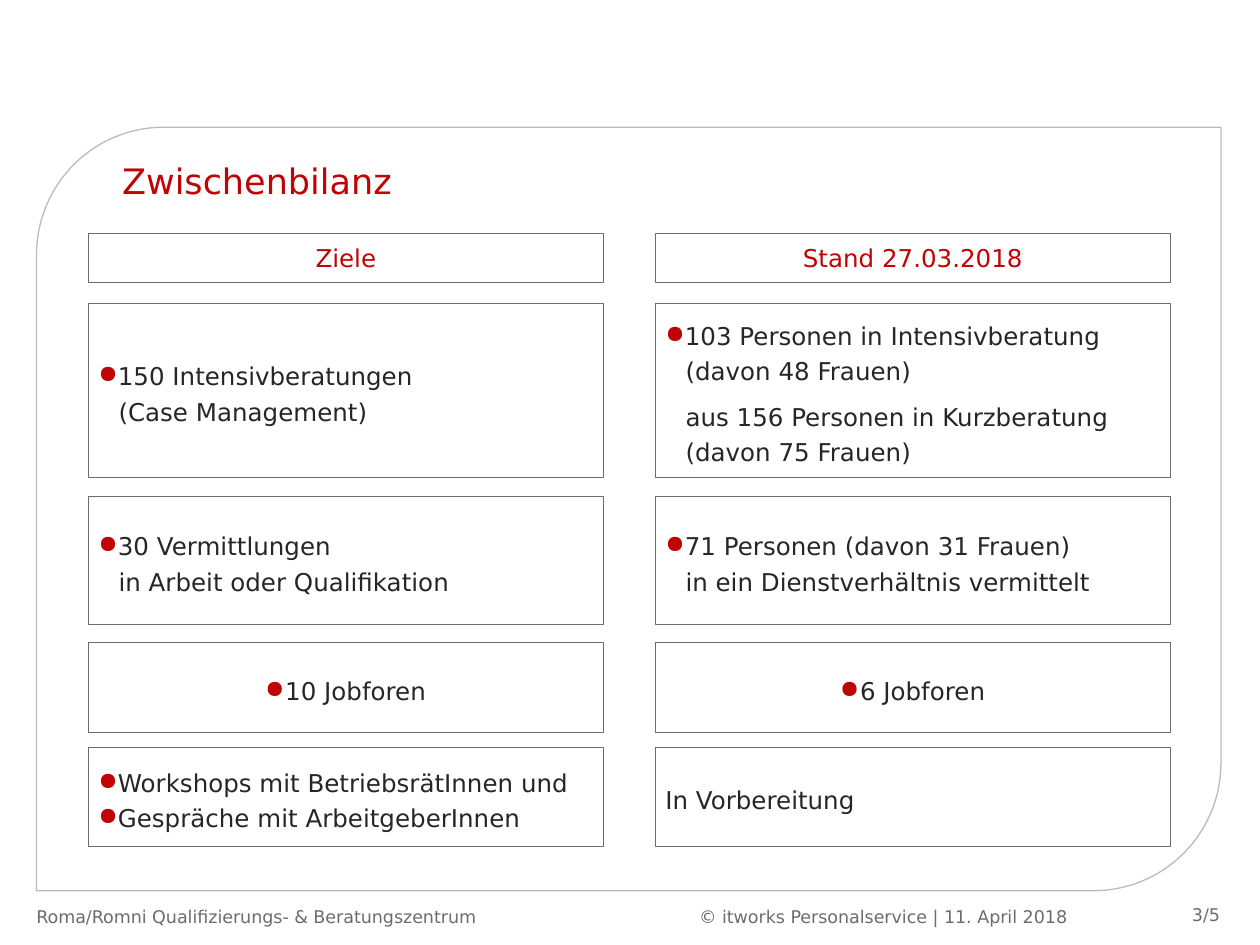
from lxml.etree import SubElement
from pptx import Presentation
from pptx.dml.color import RGBColor
from pptx.enum.shapes import MSO_SHAPE
from pptx.enum.text import MSO_ANCHOR, MSO_AUTO_SIZE, PP_ALIGN
from pptx.oxml.ns import qn
from pptx.util import Pt

FONT = "DejaVu Sans"
RED, DARK, GREY, PALE, WHITE = "C00303", "262626", "6C6C6C", "BBBBBB", "FFFFFF"

# Table-like grid: two columns, rows given as (top, height)
COLUMNS = (50.4, 374.4)
COLUMN_WIDTH = 294.5
HEADER_ROW = (133.2, 28.1)
BODY_ROWS = ((173.5, 99.4), (283.7, 73.4), (367.2, 51.1), (427, 56.9))

HEADERS = ("Ziele", "Stand 27.03.2018")

# Each line is (text, format); the format is passed to add_text
BULLET = {"bullet": "●", "margin": 8.6, "indent": -11.5}
CENTRED = {**BULLET, "align": PP_ALIGN.CENTER}
FOLLOW = {"margin": 11.5}
CELLS = (
    (
        [("150 Intensivberatungen", BULLET), ("(Case Management)", FOLLOW)],
        [
            ("103 Personen in Intensivberatung", BULLET),
            ("(davon 48 Frauen)", FOLLOW),
            ("aus 156 Personen in Kurzberatung", {**FOLLOW, "before": 6}),
            ("(davon 75 Frauen)", FOLLOW),
        ],
    ),
    (
        [("30 Vermittlungen", BULLET), ("in Arbeit oder Qualifikation", FOLLOW)],
        [
            ("71 Personen (davon 31 Frauen)", BULLET),
            ("in ein Dienstverhältnis vermittelt", FOLLOW),
        ],
    ),
    ([("10 Jobforen", CENTRED)], [("6 Jobforen", CENTRED)]),
    (
        [
            ("Workshops mit BetriebsrätInnen und", BULLET),
            ("Gespräche mit ArbeitgeberInnen", BULLET),
        ],
        [("In Vorbereitung", {})],
    ),
)


def colour(value):
    return RGBColor.from_string(value)


def add_bullet(paragraph, mark):
    properties = paragraph._p.get_or_add_pPr()
    tint = SubElement(properties, qn("a:buClr"))
    SubElement(tint, qn("a:srgbClr"), val=RED)
    SubElement(properties, qn("a:buChar"), char=mark)


def add_text(frame, text, size=14, ink=DARK, align=PP_ALIGN.LEFT, spacing=None,
             before=None, bullet=None, margin=0, indent=0):
    """Write one paragraph, reusing the first one while it is empty."""
    first = frame.paragraphs[0]
    para = frame.add_paragraph() if first.runs else first
    if bullet:
        add_bullet(para, bullet)
    if margin:
        properties = para._p.get_or_add_pPr()
        properties.set("marL", str(Pt(margin)))
        properties.set("indent", str(Pt(indent)))
    para.alignment = align
    if spacing:
        para.line_spacing = spacing
    if before:
        para.space_before = Pt(before)
    span = para.add_run()
    span.text = text
    span.font.name = FONT
    span.font.size = Pt(size)
    span.font.color.rgb = colour(ink)


def add_panel(page):
    panel = page.shapes.add_shape(MSO_SHAPE.ROUND_2_DIAG_RECTANGLE,
                                  Pt(20.9), Pt(72.7), Pt(676.8), Pt(436.3))
    panel.shadow.inherit = False
    panel.adjustments[0] = 0.167
    panel.adjustments[1] = 0
    panel.fill.solid()
    panel.fill.fore_color.rgb = colour(WHITE)
    fill = panel._element.spPr.find(qn("a:solidFill"))
    SubElement(fill[0], qn("a:alpha"), val="50000")
    panel.line.color.rgb = colour(PALE)
    panel.line.width = Pt(0.75)
    # Place the panel behind the title
    page.shapes._spTree.insert(2, panel._element)


def add_title(page, text):
    title = page.shapes.title
    title.left, title.top, title.width, title.height = (
        Pt(62.6), Pt(87.8), Pt(635), Pt(31.7))
    frame = title.text_frame
    frame.auto_size = MSO_AUTO_SIZE.NONE
    frame.vertical_anchor = MSO_ANCHOR.TOP
    add_text(frame, text, size=20, ink=RED)


def add_cell(page, left, row, lines):
    top, height = row
    cell = page.shapes.add_shape(MSO_SHAPE.RECTANGLE, Pt(left), Pt(top),
                                 Pt(COLUMN_WIDTH), Pt(height))
    cell.shadow.inherit = False
    cell.fill.background()
    cell.line.color.rgb = colour(GREY)
    cell.line.width = Pt(0.5)
    frame = cell.text_frame
    frame.word_wrap = True
    frame.vertical_anchor = MSO_ANCHOR.MIDDLE
    frame.margin_left = frame.margin_right = Pt(5.8)
    frame.margin_top = frame.margin_bottom = Pt(2.9)
    for text, style in lines:
        add_text(frame, text, **style)


def add_footer(page, text, left, top, width, height,
               anchor=MSO_ANCHOR.TOP, align=PP_ALIGN.LEFT):
    box = page.shapes.add_textbox(Pt(left), Pt(top), Pt(width), Pt(height))
    frame = box.text_frame
    frame.word_wrap = True
    frame.vertical_anchor = anchor
    add_text(frame, text, size=10, ink=GREY, align=align)


def main():
    deck = Presentation()
    deck.slide_width, deck.slide_height = Pt(720), Pt(540)
    page = deck.slides.add_slide(deck.slide_layouts[5])

    # Frame and title
    add_panel(page)
    add_title(page, "Zwischenbilanz")

    # Column headings
    heading = {"ink": RED, "align": PP_ALIGN.CENTER}
    for left, text in zip(COLUMNS, HEADERS):
        add_cell(page, left, HEADER_ROW, [(text, heading)])

    # Goals and current status
    for row, pair in zip(BODY_ROWS, CELLS):
        for left, lines in zip(COLUMNS, pair):
            add_cell(page, left, row,
                     [(text, {"spacing": 1.2, **style}) for text, style in lines])

    # Footer
    add_footer(page, "Roma/Romni Qualifizierungs- & Beratungszentrum",
               13.7, 514.1, 320.4, 28.8)
    add_footer(page, "© itworks Personalservice | 11. April 2018",
               392.4, 514.1, 270, 28.8)
    add_footer(page, "3/5", 643, 506.9, 61.2, 31.7,
               anchor=MSO_ANCHOR.MIDDLE, align=PP_ALIGN.RIGHT)

    deck.save("out.pptx")


if __name__ == "__main__":
    main()
